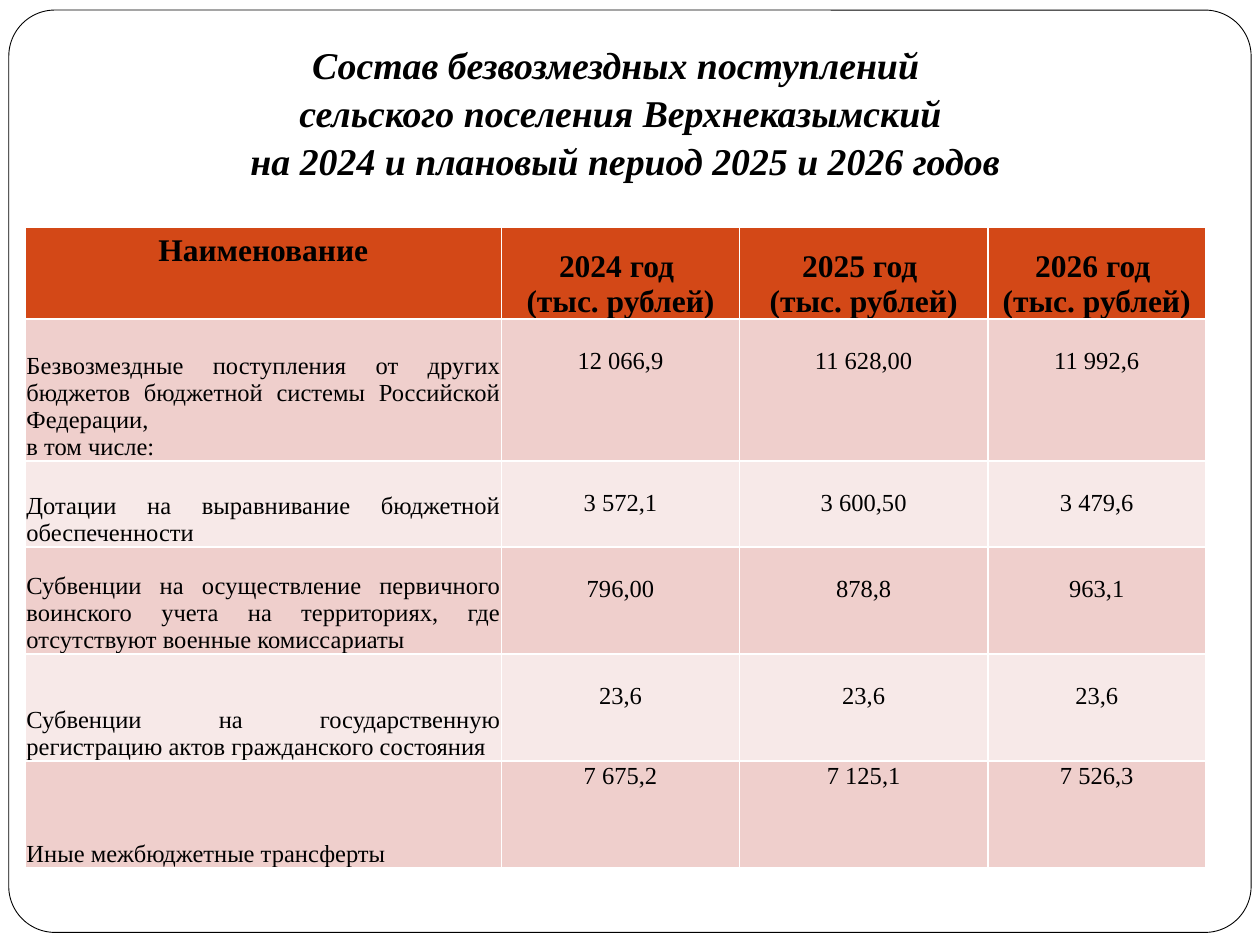
from pptx import Presentation
from pptx.dml.color import RGBColor
from pptx.enum import shapes, text
from pptx.util import Inches, Pt

FONT = "Times New Roman"
ALIGN = text.PP_ALIGN
ANCHOR = text.MSO_ANCHOR
TITLE = (
    "Состав безвозмездных поступлений \v"
    "сельского поселения Верхнеказымский\v"
    " на 2024 и плановый период 2025 и 2026 годов"
)
HEADS = ["Наименование"] + [f"{year} год \n(тыс. рублей)" for year in (2024, 2025, 2026)]
ROWS = [
    ("Безвозмездные поступления от других бюджетов бюджетной системы "
     "Российской Федерации,\nв том числе: ", "12 066,9", "11 628,00", "11 992,6"),
    ("Дотации на выравнивание бюджетной обеспеченности ",
     "3 572,1", "3 600,50", "3 479,6"),
    ("Субвенции на осуществление первичного воинского учета на территориях, "
     "где отсутствуют военные комиссариаты ", "796,00", "878,8", "963,1"),
    ("Субвенции на государственную регистрацию актов гражданского состояния ",
     "23,6", "23,6", "23,6"),
    ("Иные межбюджетные трансферты ", "7 675,2", "7 125,1", "7 526,3"),
]
WIDTHS = [3.78, 1.89, 1.97, 1.73]
HEIGHTS = [0.73, 1.13, 0.68, 0.85, 0.85, 0.85]


def color(code):
    return RGBColor.from_string(code)


def paint(part, code):
    part.fill.solid()
    part.fill.fore_color.rgb = color(code)


def style(frame, align, **font):
    """Format every paragraph of a text frame."""
    for para in frame.paragraphs:
        para.alignment = align
        para.font.color.rgb = color("000000")
        for key, value in {"name": FONT, **font}.items():
            setattr(para.font, key, value)


def inset(part, left, top, right, bottom):
    sides = {"left": left, "top": top, "right": right, "bottom": bottom}
    for side, size in sides.items():
        setattr(part, f"margin_{side}", Inches(size))


def add_frame(slide, left, top, width, height):
    frame = slide.shapes.add_shape(
        shapes.MSO_SHAPE.ROUNDED_RECTANGLE,
        Inches(left), Inches(top), Inches(width), Inches(height))
    frame.adjustments[0] = 0.05
    frame.shadow.inherit = False
    paint(frame, "FFFFFF")
    frame.line.color.rgb = color("000000")
    frame.line.width = Pt(0.5)
    slide.shapes.title._element.addprevious(frame._element)


def add_title(slide, left, top, width, height):
    title = slide.shapes.title
    box = {"left": left, "top": top, "width": width, "height": height}
    for key, value in box.items():
        setattr(title, key, Inches(value))
    frame = title.text_frame
    frame.text = TITLE
    frame.word_wrap = True
    frame.auto_size = text.MSO_AUTO_SIZE.NONE
    frame.vertical_anchor = ANCHOR.BOTTOM
    inset(frame, 0.1, 0.05, 0.1, 0.1)
    style(frame, ALIGN.CENTER, size=Pt(21.6), bold=True, italic=True)
    frame.paragraphs[0].line_spacing = 1.05


def fill_cell(cell, words, row, col):
    cell.text = words
    head, name = row == 0, col == 0
    if head:
        paint(cell, "D34817")
    else:
        paint(cell, "EFCFCC" if row % 2 else "F7E9E8")
    if not (head and name):
        drop = not head and not name and row < len(ROWS)
        inset(cell, 0.01, 0.23 if drop else 0.01, 0.01, 0)
    cell.vertical_anchor = ANCHOR.BOTTOM if head != name else ANCHOR.TOP
    align = ALIGN.JUSTIFY if name and not head else ALIGN.CENTER
    style(cell.text_frame, align, size=Pt(18 if head else 14), bold=head)


def add_budget(slide, left, top):
    data = [HEADS, *ROWS]
    table = slide.shapes.add_table(
        len(data), len(HEADS), Inches(left), Inches(top),
        Inches(sum(WIDTHS)), Inches(sum(HEIGHTS))).table
    for column, width in zip(table.columns, WIDTHS):
        column.width = Inches(width)
    for row, (values, height) in enumerate(zip(data, HEIGHTS)):
        table.rows[row].height = Inches(height)
        for col, words in enumerate(values):
            fill_cell(table.cell(row, col), words, row, col)


def main():
    deck = Presentation()
    deck.slide_width, deck.slide_height = Inches(10), Inches(7.5)
    slide = deck.slides.add_slide(deck.slide_layouts[5])
    add_frame(slide, 0.07, 0.08, 9.86, 7.32)
    add_title(slide, 0.2, 0.21, 9.45, 1.34)
    add_budget(slide, 0.2, 1.8)
    deck.save("out.pptx")


if __name__ == "__main__":
    main()
